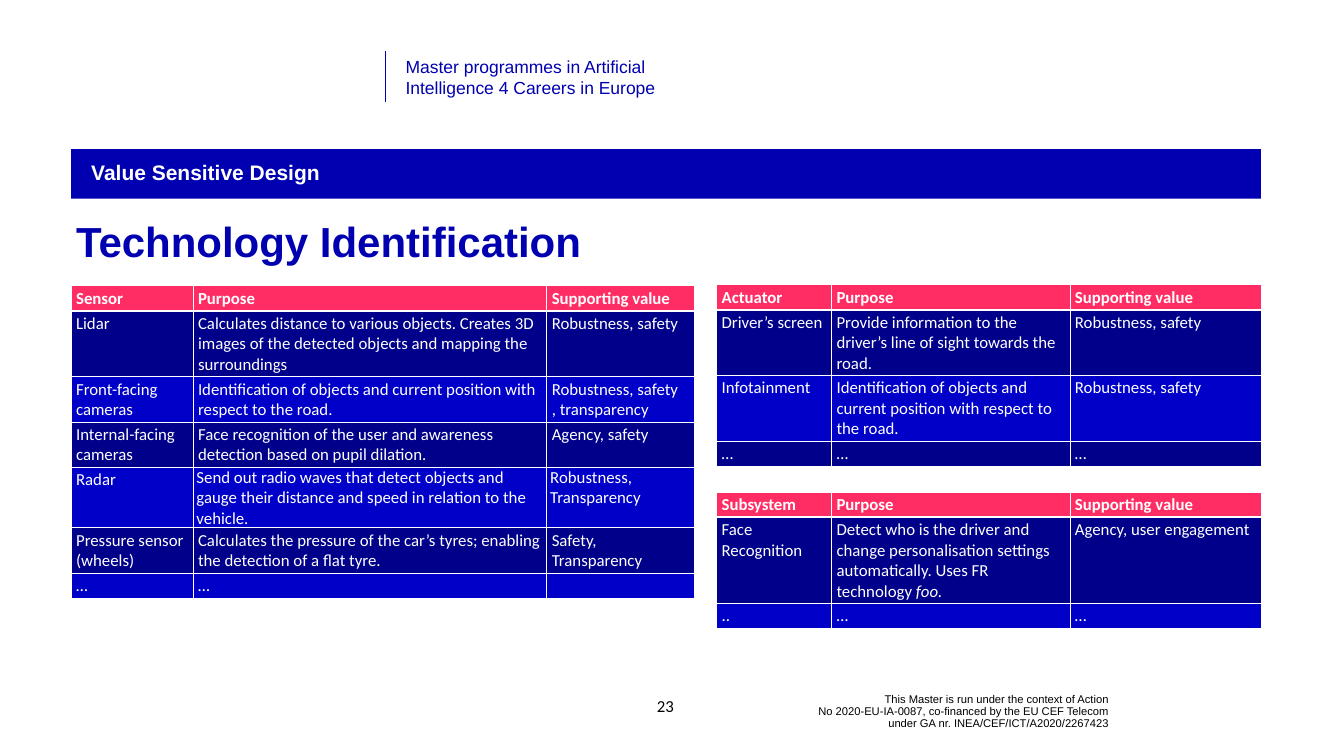
from pptx import Presentation
from pptx.dml.color import RGBColor
from pptx.enum.shapes import MSO_CONNECTOR as Conn, MSO_SHAPE as Shape
from pptx.enum.text import MSO_ANCHOR as Anchor, PP_ALIGN as Align
from pptx.oxml import parse_xml
from pptx.oxml.ns import nsdecls
from pptx.util import Inches, Pt

BLUE = RGBColor(0x00, 0x00, 0xB0)
NAVY = RGBColor(0x00, 0x00, 0x8A)
ROYAL = RGBColor(0x01, 0x00, 0xC8)
PINK = RGBColor(0xFF, 0x2D, 0x64)
WHITE = RGBColor(0xFF, 0xFF, 0xFF)
BLACK = RGBColor(0x00, 0x00, 0x00)

SENSORS = [
    ("Sensor", "Purpose", "Supporting value"),
    ("Lidar", "Calculates distance to various objects. Creates 3D images of the "
     "detected objects and mapping the surroundings", "Robustness, safety"),
    ("Front-facing cameras", "Identification of objects and current position with "
     "respect to the road.", "Robustness, safety\n, transparency"),
    ("Internal-facing cameras", "Face recognition of the user and awareness "
     "detection based on pupil dilation.", "Agency, safety"),
    ("Radar", "Send out radio waves that detect objects and gauge their distance "
     "and speed in relation to the vehicle.", "Robustness, Transparency"),
    ("Pressure sensor (wheels)", "Calculates the pressure of the car’s tyres; "
     "enabling the detection of a flat tyre.", "Safety, Transparency"),
    ("…", "…", ""),
]
ACTUATORS = [
    ("Actuator", "Purpose", "Supporting value"),
    ("Driver’s screen", "Provide information to the driver’s line of sight towards "
     "the road.", "Robustness, safety"),
    ("Infotainment", "Identification of objects and current position with respect "
     "to the road.", "Robustness, safety"),
    ("…", "…", "…"),
]
SYSTEMS = [
    ("Subsystem", "Purpose", "Supporting value"),
    ("Face Recognition", "Detect who is the driver and change personalisation "
     "settings automatically. Uses FR technology ", "Agency, user engagement"),
    ("..", "…", "…"),
]


def say(para, text, size, color, face="Arial", bold=False, italic=False):
    """Add one styled run to a paragraph."""
    run = para.add_run()
    run.text = text
    font = run.font
    font.name, font.size, font.bold, font.italic = face, Pt(size), bold, italic
    font.color.rgb = color


def write(frame, lines, size, color, face="Arial", bold=False, align=Align.LEFT,
          gap=None, anchor=Anchor.TOP):
    """Fill a text frame with one paragraph of broken lines."""
    frame.word_wrap = True
    frame.vertical_anchor = anchor
    para = frame.paragraphs[0]
    para.alignment = align
    if gap:
        para.line_spacing = gap
    for i, line in enumerate(lines):
        if i:
            para.add_line_break()
        say(para, line, size, color, face, bold)


def add_text(slide, box, *args, **style):
    """Place a text box."""
    shape = slide.shapes.add_textbox(*map(Inches, box))
    write(shape.text_frame, *args, **style)


def add_head(slide, x, y):
    """Place the programme name beside its thin rule."""
    rule = slide.shapes.add_connector(
        Conn.STRAIGHT, Inches(x), Inches(y), Inches(x), Inches(y + 1.02))
    rule.line.color.rgb = BLUE
    rule.line.width = Pt(0.5)
    rule._element.spPr.append(parse_xml(f"<a:effectLst {nsdecls('a')}/>"))
    add_text(slide, (x + 0.3, y + 0.05, 6.37, 0.94),
             ["Master programmes in Artificial", "Intelligence 4 Careers in Europe"],
             25, BLUE)


def add_title(slide, x, y, width):
    """Place the topic bar and the title below it."""
    bar = slide.shapes.add_shape(
        Shape.RECTANGLE, *map(Inches, (x, y, width, 0.98)))
    bar.shadow.inherit = False
    bar.fill.solid()
    bar.fill.fore_color.rgb = BLUE
    bar.line.fill.background()
    bar.text_frame.margin_left = Inches(0.4)
    write(bar.text_frame, ["Value Sensitive Design"], 30, WHITE, bold=True,
          gap=0.9, anchor=Anchor.MIDDLE)
    add_text(slide, (x, y + 1.3, width, 1.24), ["Technology Identification"],
             60, BLUE, bold=True, gap=Pt(70))


def add_edges(cell, base):
    """Draw the four white borders of a cell."""
    props = cell._tc.get_or_add_tcPr()
    for side, width in zip("LRTB", (1, 1, 1, base)):
        props.append(parse_xml(
            f'<a:ln{side} {nsdecls("a")} w="{Pt(width)}"><a:solidFill>'
            f'<a:srgbClr val="{WHITE}"/></a:solidFill></a:ln{side}>'))


def add_grid(slide, box, widths, rows):
    """Place a table with a pink head and banded blue rows."""
    frame = slide.shapes.add_table(len(rows), len(widths), *map(Inches, box))
    table = frame.table
    for col, width in zip(table.columns, widths):
        col.width = Inches(width)
    for r, row in enumerate(rows):
        table.rows[r].height = Inches(0.19 if r == 1 else 0.41)
        for c, text in enumerate(row):
            cell = table.cell(r, c)
            add_edges(cell, 1 if r else 3)
            cell.fill.solid()
            cell.fill.fore_color.rgb = (NAVY if r % 2 else ROYAL) if r else PINK
            if row[0] == "Radar" and c:
                cell.margin_left = cell.margin_right = Inches(0.07)
                cell.margin_top = cell.margin_bottom = 0
            for i, line in enumerate(text.split("\n")):
                paras = cell.text_frame
                para = paras.add_paragraph() if i else paras.paragraphs[0]
                para.font.size = Pt(24)
                say(para, line, 24, WHITE, "Calibri", bold=r == 0)
    frame.height = Inches(box[3])
    return table


def add_tables(slide, x, y):
    """Place the sensor table and the two tables to its right."""
    side = (2.28, 4.73, 3.79)
    add_grid(slide, (x, y, 12.36, 6.2), (2.42, 7.02, 2.92), SENSORS)
    add_grid(slide, (x + 12.81, y - 0.02, 10.8, 3.6), side, ACTUATORS)
    table = add_grid(slide, (x + 12.81, y + 4.09, 10.8, 2.7), side, SYSTEMS)
    para = table.cell(1, 1).text_frame.paragraphs[0]
    say(para, "foo.", 24, WHITE, "Calibri", italic=True)


def add_foot(slide, x, y):
    """Place the page number and the funding note."""
    add_text(slide, (x, y, 1.11, 0.8), ["23"], 24, BLACK, face="Calibri",
             align=Align.CENTER, anchor=Anchor.MIDDLE)
    add_text(slide, (x + 2.37, y + 0.13, 7.08, 0.76),
             ["This Master is run under the context of Action",
              "No 2020-EU-IA-0087, co-financed by the EU CEF Telecom",
              "under GA nr. INEA/CEF/ICT/A2020/2267423"],
             16, BLACK, align=Align.RIGHT, gap=0.9, anchor=Anchor.MIDDLE)


def main():
    """Build and save the slide."""
    deck = Presentation()
    deck.slide_width, deck.slide_height = Inches(26.67), Inches(15)
    slide = deck.slides.add_slide(deck.slide_layouts[6])
    add_head(slide, 7.65, 1.01)
    add_title(slide, 1.41, 2.96, 23.61)
    add_tables(slide, 1.41, 5.67)
    add_foot(slide, 12.65, 13.61)
    deck.save("out.pptx")


if __name__ == "__main__":
    main()
